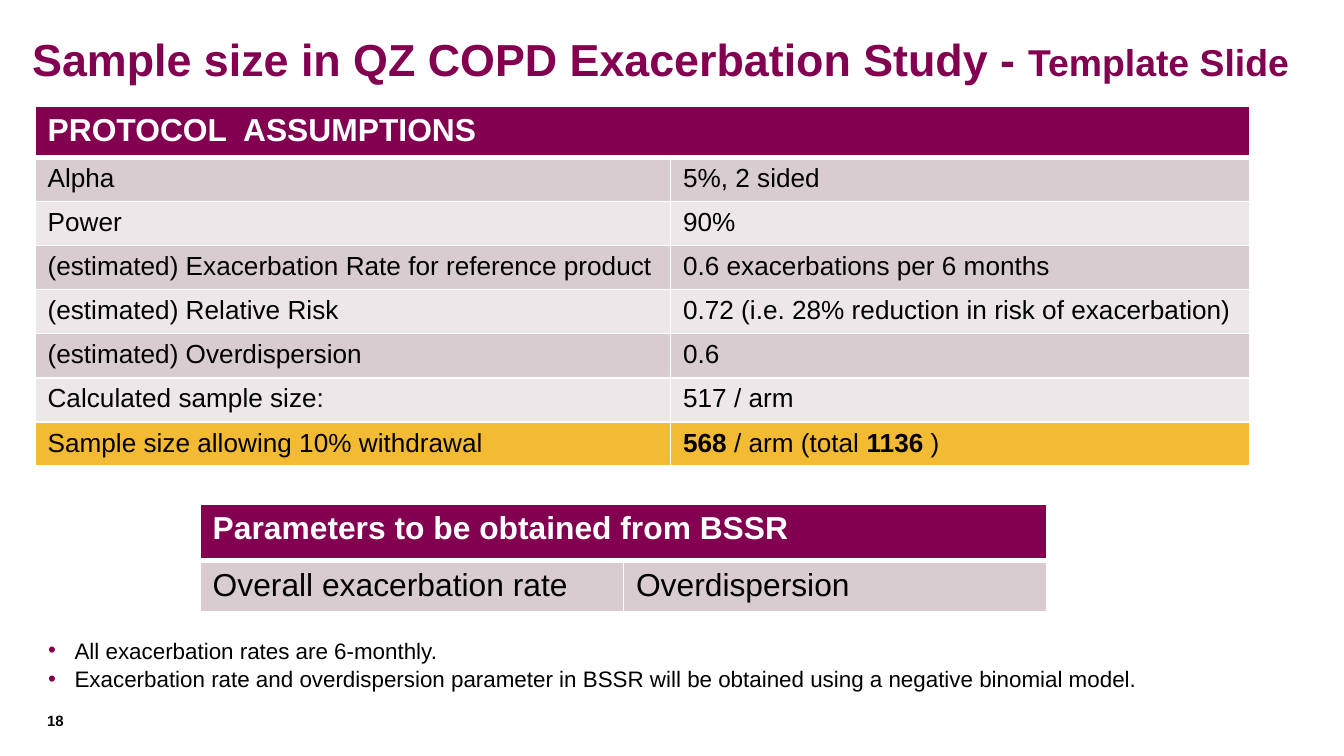
from lxml.etree import SubElement
from pptx import Presentation
from pptx.dml.color import RGBColor
from pptx.enum.text import MSO_ANCHOR
from pptx.oxml.ns import qn
from pptx.util import Cm, Pt

PLUM = RGBColor(0x83, 0x00, 0x51)
ROSE = RGBColor(0xD9, 0xCC, 0xD0)
PALE = RGBColor(0xED, 0xE7, 0xE9)
GOLD = RGBColor(0xF3, 0xBB, 0x33)
WHITE = RGBColor(0xFF, 0xFF, 0xFF)
BLACK = RGBColor(0x00, 0x00, 0x00)

ASSUMPTIONS = [
    ("Alpha", "5%, 2 sided"),
    ("Power", "90%"),
    ("(estimated) Exacerbation Rate for reference product",
     "0.6 exacerbations per 6 months"),
    ("(estimated) Relative Risk",
     "0.72 (i.e. 28% reduction in risk of exacerbation)"),
    ("(estimated) Overdispersion", "0.6"),
    ("Calculated sample size:", "517 / arm"),
    ("Sample size allowing 10% withdrawal",
     [("568", True), (" / arm (total ", False), ("1136", True), (" )", False)]),
]
NOTES = [
    "All exacerbation rates are 6-monthly.",
    "Exacerbation rate and overdispersion parameter in BSSR will be "
    "obtained using a negative binomial model.",
]


def add_run(p, text, size, color=BLACK, bold=False):
    r = p.add_run()
    r.text = text
    r.font.name = "Arial"
    r.font.size = Pt(size)
    r.font.bold = bold
    r.font.color.rgb = color


def add_text_box(s, left, top, width, height):
    tf = s.shapes.add_textbox(Cm(left), Cm(top), Cm(width), Cm(height)).text_frame
    tf.word_wrap = True
    return tf


def add_title(s):
    tf = add_text_box(s, 0.36, 0.41, 24.64, 1.4)
    tf.vertical_anchor = MSO_ANCHOR.MIDDLE
    p = tf.paragraphs[0]
    add_run(p, "Sample size in QZ COPD Exacerbation Study - ", 24, PLUM, True)
    add_run(p, "Template Slide", 20, PLUM, True)


def add_page_number(s):
    tf = add_text_box(s, 0.89, 13.46, 1.09, 0.46)
    tf.margin_left = tf.margin_right = tf.margin_top = tf.margin_bottom = 0
    add_run(tf.paragraphs[0], "18", 8, bold=True)


def add_bullet(p):
    pPr = p._p.get_or_add_pPr()
    pPr.set("marL", str(Cm(0.5)))
    pPr.set("indent", str(Cm(-0.5)))
    color = SubElement(pPr, qn("a:buClr"))
    SubElement(color, qn("a:srgbClr"), val=str(PLUM))
    SubElement(pPr, qn("a:buFont"), typeface="Arial")
    SubElement(pPr, qn("a:buChar"), char="•")


def add_notes(s):
    tf = add_text_box(s, 0.66, 11.91, 22.28, 1.68)
    for i, note in enumerate(NOTES):
        p = tf.add_paragraph() if i else tf.paragraphs[0]
        add_bullet(p)
        if i:
            p.space_before = Pt(1)
        add_run(p, note, 12)


def set_borders(cell, **widths):
    """White edges, 1 pt unless a width is given for the side."""
    tcPr = cell._tc.get_or_add_tcPr()
    for i, side in enumerate(("lnL", "lnR", "lnT", "lnB")):
        ln = tcPr.makeelement(qn(f"a:{side}"), {"w": str(Pt(widths.get(side, 1)))})
        fill = SubElement(ln, qn("a:solidFill"))
        SubElement(fill, qn("a:srgbClr"), val=str(WHITE))
        tcPr.insert(i, ln)


def fill_cell(cell, content, size, fill, color=BLACK, bold=False):
    """Content is a string or a list of (text, bold) runs."""
    cell.margin_left = cell.margin_right = Cm(0.24)
    cell.margin_top = cell.margin_bottom = Cm(0.12)
    cell.fill.solid()
    cell.fill.fore_color.rgb = fill
    runs = [(content, bold)] if isinstance(content, str) else content
    for text, is_bold in runs:
        add_run(cell.text_frame.paragraphs[0], text, size, color, is_bold)


def add_headed_table(s, left, top, widths, heights, header, rows, size, fills):
    """Table with one merged header row above two-column rows."""
    table = s.shapes.add_table(len(rows) + 1, 2, Cm(left), Cm(top),
                               Cm(sum(widths)), Cm(sum(heights))).table
    for col, width in zip(table.columns, widths):
        col.width = Cm(width)
    for row, height in zip(table.rows, heights):
        row.height = Cm(height)
    table.cell(0, 0).merge(table.cell(0, 1))
    fill_cell(table.cell(0, 0), header, 17, PLUM, WHITE, True)
    for i, (row, fill) in enumerate(zip(rows, fills), 1):
        for j, content in enumerate(row):
            fill_cell(table.cell(i, j), content, size, fill)
            set_borders(table.cell(i, j), lnT=3 if i == 1 else 1)
    for j in range(2):
        set_borders(table.cell(0, j), lnB=3)


def main():
    prs = Presentation()
    prs.slide_width, prs.slide_height = Cm(25.4), Cm(14.29)
    s = prs.slides.add_slide(prs.slide_layouts[6])
    add_title(s)
    add_page_number(s)
    add_notes(s)
    add_headed_table(s, 0.66, 2.01, (12.01, 10.95), [0.89] + [0.76] * 7,
                     "PROTOCOL  ASSUMPTIONS", ASSUMPTIONS, 14,
                     [ROSE, PALE] * 3 + [GOLD])
    add_headed_table(s, 3.78, 9.53, (8, 8), [1.07, 0.89],
                     "Parameters to be obtained from BSSR",
                     [("Overall exacerbation rate", "Overdispersion")], 17, [ROSE])
    prs.save("out.pptx")


if __name__ == "__main__":
    main()
